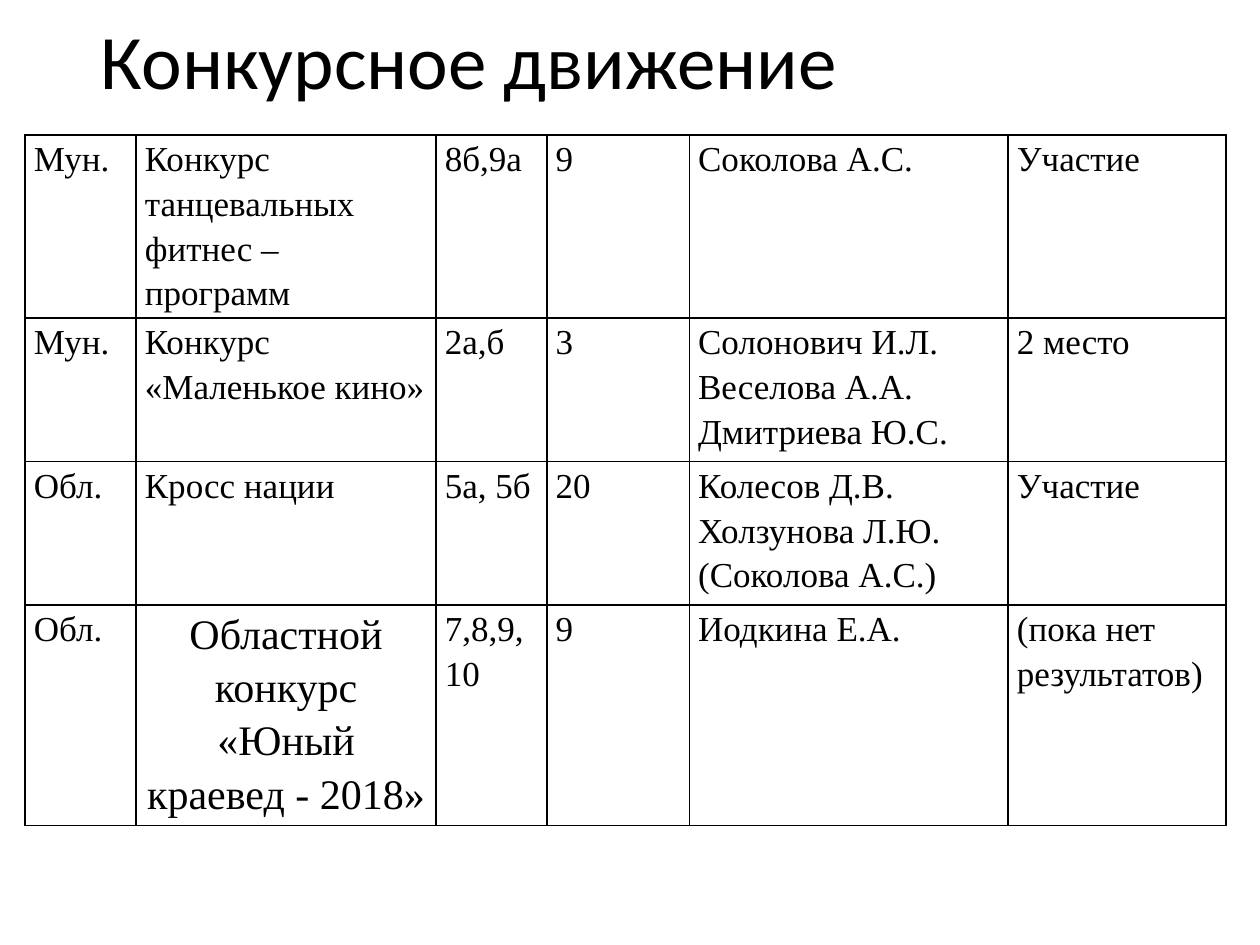
from dataclasses import dataclass

from lxml import etree
from pptx import Presentation
from pptx.dml.color import RGBColor
from pptx.enum.text import MSO_ANCHOR, PP_ALIGN
from pptx.oxml.ns import qn
from pptx.util import Pt

LEFT, CENTER = PP_ALIGN.LEFT, PP_ALIGN.CENTER
TOP, MIDDLE = MSO_ANCHOR.TOP, MSO_ANCHOR.MIDDLE
TITLE_ONLY = 5


@dataclass(frozen=True)
class Theme:
    """Colours, fonts and type sizes of the slide."""
    ink: str = "000000"
    title_font: str = "Calibri"
    body_font: str = "Times New Roman"
    title_size: int = 44
    body_size: int = 20
    accent_size: int = 24
    border_width: int = 1


THEME = Theme()
TITLE_BOX = (50.4, 0, 620.6, 73.4)
TABLE_BOX = (14.4, 77.04, 686.2, 394.6)
COLUMN_WIDTHS = (63.4, 171.4, 63.4, 81.4, 182.2, 124.4)
ROW_HEIGHTS = (104.6, 82, 82, 126)
CONTESTS = (
    ("Мун.", "Конкурс танцевальных фитнес – программ", "8б,9а", "9",
     "Соколова А.С.", "Участие"),
    ("Мун.", "Конкурс «Маленькое кино»", "2а,б", "3",
     "Солонович И.Л.\nВеселова А.А.\nДмитриева Ю.С.", "2 место"),
    ("Обл.", "Кросс нации", "5а, 5б", "20",
     "Колесов Д.В.\nХолзунова Л.Ю.\n(Соколова А.С.)", "Участие"),
    ("Обл.", "Областной конкурс «Юный краевед - 2018»", "7,8,9,10", "9",
     "Иодкина Е.А.", "(пока нет результатов)"),
)
HIGHLIGHTED_CELL = (3, 1)


def write_text(text_frame, text, font, size, spacing, alignment=LEFT):
    """Write each line of the text as a formatted paragraph."""
    for index, line in enumerate(text.split("\n")):
        paragraph = text_frame.add_paragraph() if index else text_frame.paragraphs[0]
        paragraph.alignment = alignment
        paragraph.line_spacing = spacing
        paragraph.space_before = paragraph.space_after = Pt(0)
        run = paragraph.add_run()
        run.text = line
        run.font.name = font
        run.font.size = Pt(size)
        run.font.bold = False
        run.font.color.rgb = RGBColor.from_string(THEME.ink)


def add_borders(cell):
    """Draw a solid line on all four sides of a cell."""
    properties = cell._tc.get_or_add_tcPr()
    for side in ("lnL", "lnR", "lnT", "lnB"):
        line = etree.SubElement(properties, qn(f"a:{side}"), w=str(Pt(THEME.border_width)))
        fill = etree.SubElement(line, qn("a:solidFill"))
        etree.SubElement(fill, qn("a:srgbClr"), val=THEME.ink)


def place_title(slide, box, text):
    """Move the title placeholder into the box and fill it."""
    title = slide.shapes.title
    title.left, title.top, title.width, title.height = map(Pt, box)
    title.text_frame.word_wrap = True
    title.text_frame.vertical_anchor = MIDDLE
    write_text(title.text_frame, text, THEME.title_font, THEME.title_size, 0.9)


def place_contest_table(slide, box, rows):
    """Add the bordered table of contests in the box."""
    shape = slide.shapes.add_table(len(rows), len(COLUMN_WIDTHS), *map(Pt, box))
    table = shape.table
    table.first_row = table.horz_banding = False
    for column, width in zip(table.columns, COLUMN_WIDTHS):
        column.width = Pt(width)
    for row, height in zip(table.rows, ROW_HEIGHTS):
        row.height = Pt(height)
    for row_index, texts in enumerate(rows):
        for column_index, text in enumerate(texts):
            cell = table.cell(row_index, column_index)
            cell.margin_left = cell.margin_right = Pt(5)
            cell.margin_top = cell.margin_bottom = Pt(0)
            cell.vertical_anchor = TOP
            add_borders(cell)
            cell.fill.background()
            highlighted = (row_index, column_index) == HIGHLIGHTED_CELL
            size = THEME.accent_size if highlighted else THEME.body_size
            alignment = CENTER if highlighted else LEFT
            write_text(cell.text_frame, text, THEME.body_font, size, 1.15, alignment)


def main():
    """Build and save the presentation."""
    presentation = Presentation()
    presentation.slide_width, presentation.slide_height = Pt(720), Pt(540)
    slide = presentation.slides.add_slide(presentation.slide_layouts[TITLE_ONLY])
    place_title(slide, TITLE_BOX, "Конкурсное движение")
    place_contest_table(slide, TABLE_BOX, CONTESTS)
    presentation.save("out.pptx")


if __name__ == "__main__":
    main()
